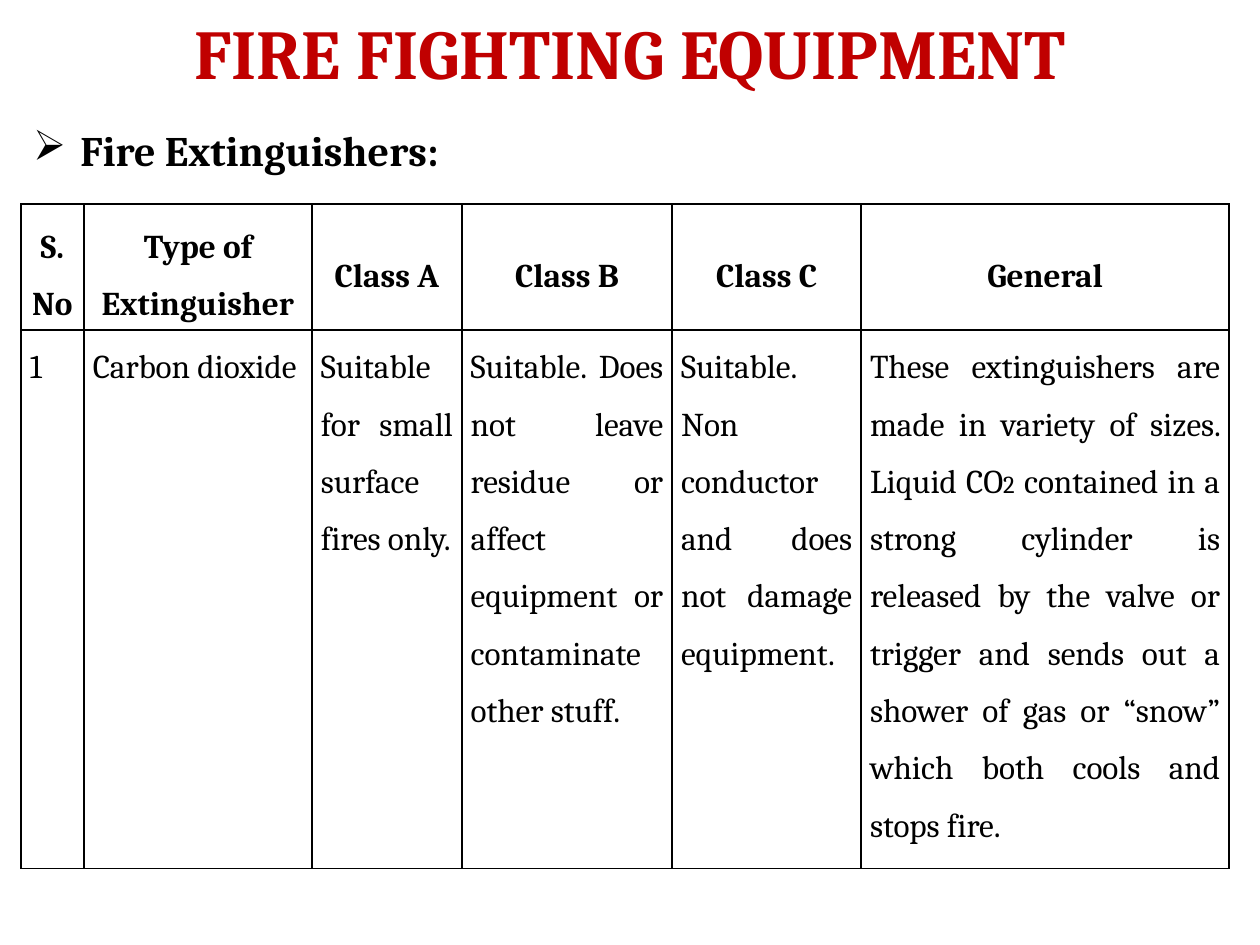
import pptx
import pptx.dml.color
import pptx.enum.text
import pptx.oxml
import pptx.oxml.ns
import pptx.util
from pptx.util import Cm

FONT = "Cambria"
BLACK, RED, WHITE = "000000", "C00000", "FFFFFF"
ALIGN = pptx.enum.text.PP_ALIGN
ANCHOR = pptx.enum.text.MSO_ANCHOR

COLUMN_WIDTHS = [1.27, 4.6, 3.02, 4.24, 3.81, 7.42]
ROW_HEIGHTS = [2.54, 9.09]
HEADINGS = ["S.No", "Type of Extinguisher", "Class A", "Class B", "Class C", "General"]
# Each cell is a list of (text, size) runs.
CARBON_DIOXIDE = [
    [("1", 19)],
    [("Carbon dioxide", 19)],
    [("Suitable for small surface fires only.", 19)],
    [("Suitable. Does not leave residue or affect equipment or contaminate other stuff.", 19)],
    [("Suitable. Non conductor and does not damage equipment.", 19)],
    [
        ("These extinguishers are made in variety of sizes. Liquid CO", 19),
        ("2", 14),
        (" contained in a strong cylinder is released by the valve or trigger and "
         "sends out a shower of gas or “snow” which both cools and stops fire.", 19),
    ],
]


def rgb(color):
    return pptx.dml.color.RGBColor.from_string(color)


def add_run(paragraph, text, size, color=BLACK, bold=False):
    run = paragraph.add_run()
    run.text = text
    run.font.name = FONT
    run.font.size = pptx.util.Pt(size)
    run.font.bold = bold
    run.font.color.rgb = rgb(color)


def add_text_box(slide, left, top, width, height, top_margin, alignment):
    """Add an empty wrapped text box and return its first paragraph."""
    frame = slide.shapes.add_textbox(Cm(left), Cm(top), Cm(width), Cm(height)).text_frame
    frame.word_wrap = True
    frame.margin_top = Cm(top_margin)
    frame.vertical_anchor = ANCHOR.TOP
    paragraph = frame.paragraphs[0]
    paragraph.alignment = alignment
    return paragraph


def add_bullet(paragraph, character, indent):
    properties = paragraph._p.get_or_add_pPr()
    properties.set("marL", str(Cm(indent)))
    properties.set("indent", str(-Cm(indent)))
    bullet = pptx.oxml.parse_xml(
        f'<a:buChar {pptx.oxml.ns.nsdecls("a")} char="{character}"/>')
    properties.append(bullet)


def add_borders(cell, color, points):
    properties = cell._tc.get_or_add_tcPr()
    for position, side in enumerate(("lnL", "lnR", "lnT", "lnB")):
        border = pptx.oxml.parse_xml(
            f'<a:{side} {pptx.oxml.ns.nsdecls("a")} w="{pptx.util.Pt(points)}">'
            f'<a:solidFill><a:srgbClr val="{color}"/></a:solidFill></a:{side}>')
        properties.insert(position, border)


def fill_cell(cell, runs, is_heading):
    cell.fill.solid()
    cell.fill.fore_color.rgb = rgb(WHITE)
    add_borders(cell, BLACK, 1)
    cell.margin_left = cell.margin_right = Cm(0.18)
    cell.margin_top = cell.margin_bottom = Cm(0)
    cell.vertical_anchor = ANCHOR.MIDDLE if is_heading else ANCHOR.TOP
    paragraph = cell.text_frame.paragraphs[0]
    paragraph.alignment = ALIGN.CENTER if is_heading else ALIGN.JUSTIFY
    paragraph.line_spacing = 1.5
    for text, size in runs:
        add_run(paragraph, text, size, bold=is_heading)


def add_extinguisher_table(slide):
    rows = [[[(heading, 19)] for heading in HEADINGS], CARBON_DIOXIDE]
    table = slide.shapes.add_table(
        len(rows), len(HEADINGS), Cm(0.42), Cm(4.11),
        Cm(sum(COLUMN_WIDTHS)), Cm(sum(ROW_HEIGHTS))).table
    for column, width in zip(table.columns, COLUMN_WIDTHS):
        column.width = Cm(width)
    for row_index, cells in enumerate(rows):
        table.rows[row_index].height = Cm(ROW_HEIGHTS[row_index])
        for column_index, runs in enumerate(cells):
            fill_cell(table.cell(row_index, column_index), runs, row_index == 0)


def main():
    presentation = pptx.Presentation()
    presentation.slide_width = Cm(25.4)
    presentation.slide_height = Cm(19.05)
    slide = presentation.slides.add_slide(presentation.slide_layouts[6])

    title = add_text_box(slide, 1.27, 0.2, 22.86, 3.18, 0, ALIGN.CENTER)
    add_run(title, "FIRE FIGHTING EQUIPMENT", 40, RED, bold=True)

    subtitle = add_text_box(slide, 0.42, 2.34, 20.57, 1.27, 0.18, ALIGN.JUSTIFY)
    add_bullet(subtitle, "➢", 0.95)
    add_run(subtitle, "Fire Extinguishers:", 24, bold=True)

    add_extinguisher_table(slide)
    presentation.save("out.pptx")


if __name__ == "__main__":
    main()
